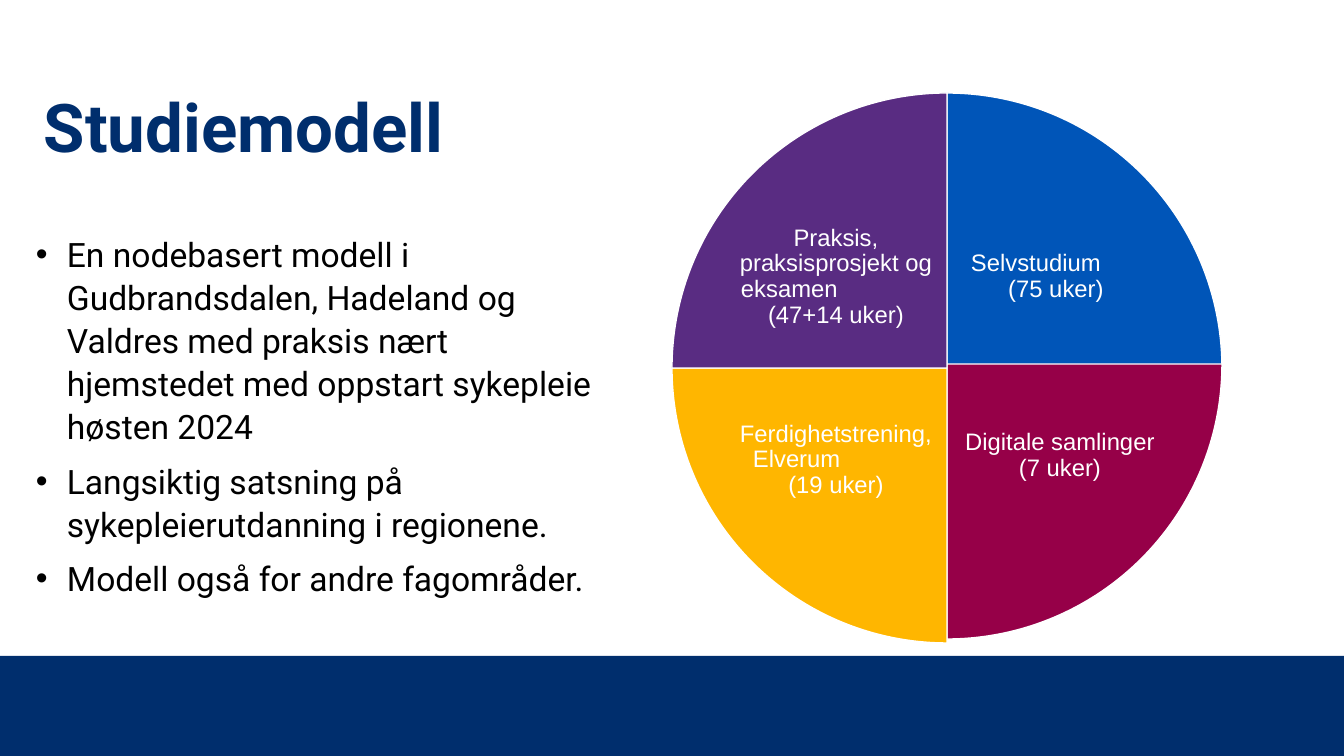
from lxml.etree import SubElement
from pptx import Presentation
from pptx.dml.color import RGBColor
from pptx.enum.shapes import MSO_SHAPE
from pptx.enum.text import MSO_ANCHOR, PP_ALIGN
from pptx.oxml.ns import qn
from pptx.util import Pt

EMU_PER_PX = 914400 / 100.8
NAVY = RGBColor(0x00, 0x2E, 0x6D)
BLUE = RGBColor(0x00, 0x55, 0xB8)
CRIMSON = RGBColor(0x96, 0x00, 0x48)
YELLOW = RGBColor(0xFF, 0xB6, 0x00)
PURPLE = RGBColor(0x59, 0x2C, 0x82)
WHITE = RGBColor(0xFF, 0xFF, 0xFF)
BLACK = RGBColor(0x00, 0x00, 0x00)

TITLE_FONT = {"name": "Roboto", "size": Pt(48), "bold": True}
BODY_FONT = {"name": "Roboto", "size": Pt(24)}
LABEL_FONT = {"name": "Arial", "size": Pt(17)}
BULLET_INDENT = 31

POINTS = [
    "En nodebasert modell i Gudbrandsdalen, Hadeland og Valdres med praksis "
    "nært hjemstedet med oppstart sykepleie høsten 2024",
    "Langsiktig satsning på sykepleierutdanning i regionene.",
    "Modell også for andre fagområder.",
]

# Clockwise from the top: colour, drop of the sector, label offset, label lines.
# A line with an indent is left-aligned, one with None is centred.
SECTORS = [
    (BLUE, 0, (282, 102), [("Selvstudium", 15), ("(75 uker)", None)]),
    (CRIMSON, -4, (286, 281), [("Digitale samlinger (7 uker)", None)]),
    (YELLOW, 0, (62, 285),
     [("Ferdighetstrening,", None), ("Elverum", 17), ("(19 uker)", None)]),
    (PURPLE, 0, (62, 102),
     [("Praksis, praksisprosjekt og", None), ("eksamen", 5),
      ("(47+14 uker)", None)]),
]
QUARTER = 54  # 90 degrees in shape adjustment units


def px(length):
    return round(length * EMU_PER_PX)


def add_text_frame(slide, box, anchor=MSO_ANCHOR.TOP):
    frame = slide.shapes.add_textbox(*map(px, box)).text_frame
    frame.word_wrap = True
    frame.vertical_anchor = anchor
    return frame


def add_line(frame, index, text, font_format, color, spacing):
    line = frame.paragraphs[0] if index == 0 else frame.add_paragraph()
    line.line_spacing = spacing
    run = line.add_run()
    run.text = text
    for attribute, value in font_format.items():
        setattr(run.font, attribute, value)
    run.font.color.rgb = color
    return line


def add_filled(slide, preset, box, color):
    shape = slide.shapes.add_shape(preset, *map(px, box))
    shape.shadow.inherit = False
    shape.fill.solid()
    shape.fill.fore_color.rgb = color
    return shape


def add_footer_band(slide, box):
    add_filled(slide, MSO_SHAPE.RECTANGLE, box, NAVY).line.fill.background()


def add_title(slide, box):
    frame = add_text_frame(slide, box, MSO_ANCHOR.BOTTOM)
    add_line(frame, 0, "Studiemodell", TITLE_FONT, NAVY, 0.9)


def add_points(slide, box):
    frame = add_text_frame(slide, box)
    for index, text in enumerate(POINTS):
        point = add_line(frame, index, text, BODY_FONT, BLACK, 1.07)
        point.space_after = Pt(8)
        properties = point._p.get_or_add_pPr()
        properties.set("marL", str(px(BULLET_INDENT)))
        properties.set("indent", str(-px(BULLET_INDENT)))
        SubElement(properties, qn("a:buFont"), typeface="Arial")
        SubElement(properties, qn("a:buChar"), char="•")


def add_sector_label(slide, box, lines):
    frame = add_text_frame(slide, box, MSO_ANCHOR.MIDDLE)
    for side in ("left", "top", "right", "bottom"):
        setattr(frame, f"margin_{side}", px(2))
    for index, (text, indent) in enumerate(lines):
        line = add_line(frame, index, text, LABEL_FONT, WHITE, 0.9)
        if indent is None:
            line.alignment = PP_ALIGN.CENTER
        else:
            line.alignment = PP_ALIGN.LEFT
            line._p.get_or_add_pPr().set("marL", str(px(indent)))


def add_study_wheel(slide, box):
    left, top, width, height = box
    for index, (color, drop, (dx, dy), lines) in enumerate(SECTORS):
        sector = add_filled(
            slide, MSO_SHAPE.PIE, (left, top + drop, width, height), color)
        sector.adjustments[0] = (index + 3) % 4 * QUARTER
        sector.adjustments[1] = index * QUARTER
        sector.line.color.rgb = WHITE
        sector.line.width = Pt(1)
        add_sector_label(slide, (left + dx, top + dy, 204, 164), lines)


def main():
    presentation = Presentation()
    presentation.slide_width = px(1344)
    presentation.slide_height = px(756)
    slide = presentation.slides.add_slide(presentation.slide_layouts[6])
    add_footer_band(slide, (0, 656, 1344, 100))
    add_title(slide, (34, 71, 509, 101))
    add_points(slide, (26, 226, 592, 380))
    add_study_wheel(slide, (672, 93, 550, 550))
    presentation.save("out.pptx")


if __name__ == "__main__":
    main()
